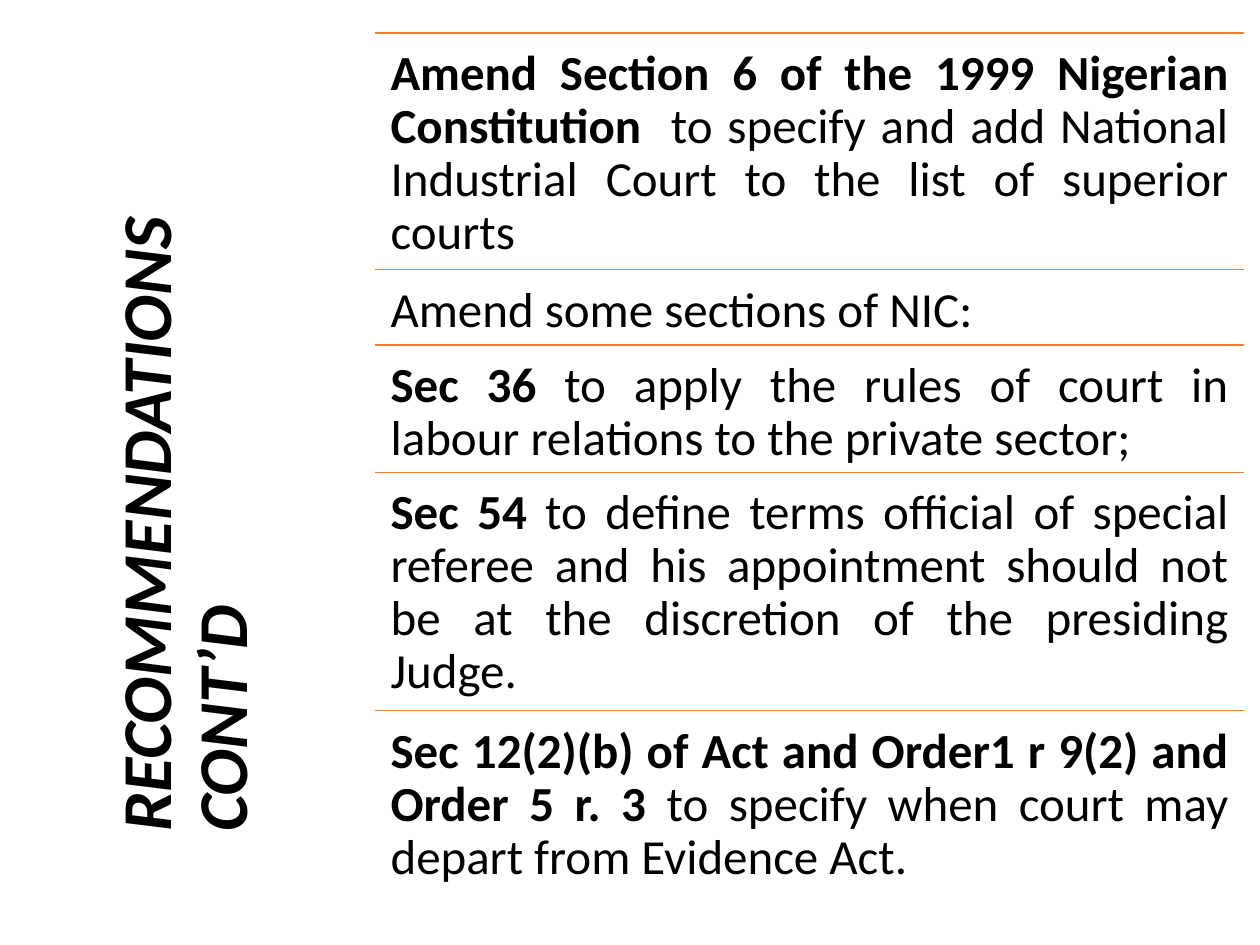
from lxml import etree
from pptx import Presentation
from pptx import util as u
from pptx.dml.color import RGBColor
from pptx.enum import shapes, text
from pptx.oxml.ns import qn

BLACK = RGBColor(0x00, 0x00, 0x00)
ORANGE = RGBColor(0xED, 0x7D, 0x31)
LEFT, WIDTH = 2.98, 6.89
JUSTIFY, PLAIN = text.PP_ALIGN.JUSTIFY, text.PP_ALIGN.LEFT

# top, height, alignment, bold lead, regular text
ROWS = [
    (0.26, 1.89, JUSTIFY, "Amend Section 6 of the 1999 Nigerian Constitution",
     "  to specify and add National Industrial Court to the list of superior courts"),
    (2.14, 0.59, PLAIN, "", "Amend some sections of NIC:"),
    (2.74, 1.01, JUSTIFY, "Sec 36 ",
     "to apply the rules of court in labour relations to the private sector;"),
    (3.75, 1.89, JUSTIFY, "Sec 54",
     " to define terms official of special referee and his appointment "
     "should not be at the discretion of the presiding Judge."),
    (5.64, 1.65, JUSTIFY, "Sec 12(2)(b) of Act and Order1 r 9(2) and Order 5 r. 3 ",
     "to specify when court may depart from Evidence Act."),
]


def add_text(s, left, top, width, height, size):
    """Add a wrapping text box and return it with its styled first paragraph."""
    sp = s.shapes.add_textbox(u.Inches(left), u.Inches(top),
                              u.Inches(width), u.Inches(height))
    sp.text_frame.word_wrap = True
    p = sp.text_frame.paragraphs[0]
    p.line_spacing = 0.9
    p.font.name = "Calibri"
    p.font.size = u.Pt(size)
    p.font.color.rgb = BLACK
    return sp, p


prs = Presentation()
prs.slide_width, prs.slide_height = u.Inches(10), u.Inches(7.5)
s = prs.slides.add_slide(prs.slide_layouts[6])

# Vertical title
sp, p = add_text(s, -1.44, 2.79, 5.85, 1.97, 40)
sp.rotation = 270
sp.text_frame.vertical_anchor = text.MSO_ANCHOR.MIDDLE
p.font.bold = p.font.italic = True
p.add_run().text = "RECOMMENDATIONS CONT’D"

# Recommendations, each under a rule
for top, height, align, lead, body in ROWS:
    ln = s.shapes.add_connector(shapes.MSO_CONNECTOR.STRAIGHT,
                                u.Inches(LEFT), u.Inches(top),
                                u.Inches(LEFT + WIDTH), u.Inches(top))
    ln.line.color.rgb = ORANGE
    ln.line.width = u.Pt(1)
    etree.SubElement(ln._element.spPr, qn("a:effectLst"))

    sp, p = add_text(s, LEFT, top, WIDTH, height, 28)
    tf = sp.text_frame
    tf.margin_left = tf.margin_right = u.Inches(0.12)
    tf.margin_top = tf.margin_bottom = u.Inches(0.12)
    p.alignment = align
    for words, bold in ((lead, True), (body, False)):
        if words:
            r = p.add_run()
            r.text = words
            r.font.bold = bold

prs.save("out.pptx")
